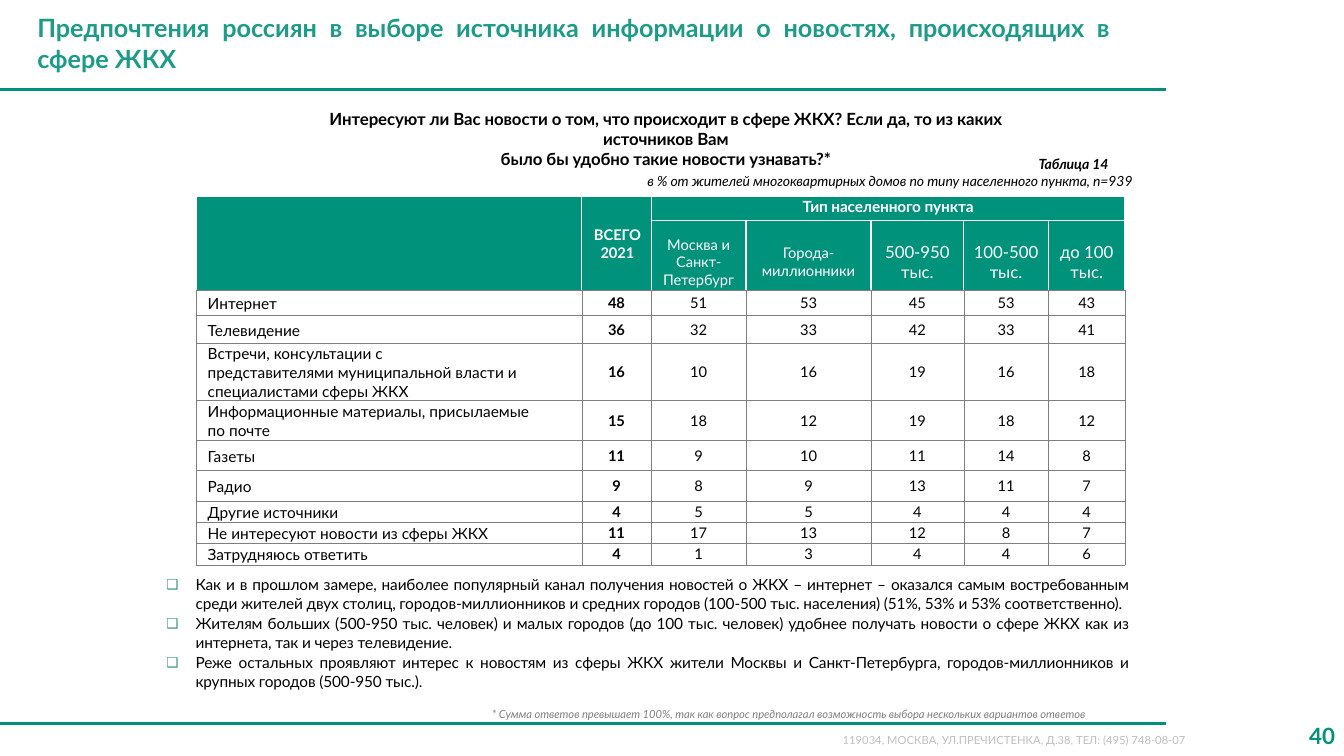
from lxml import etree
from pptx import Presentation
from pptx.dml.color import RGBColor
from pptx.enum import shapes, text
from pptx.oxml.ns import qn
from pptx.util import Inches, Pt

# Content
TITLE = "Предпочтения россиян в выборе источника информации о новостях, происходящих в сфере ЖКХ"
QUESTION = [
    "Интересуют ли Вас новости о том, что происходит в сфере ЖКХ? Если да, то из каких источников Вам",
    "было бы удобно такие новости узнавать?*",
]
TABLE_NUMBER = "Таблица 14"
TABLE_BASE = "в % от жителей многоквартирных домов по типу населенного пункта, n=939"
FOOTNOTE = ("* Сумма ответов превышает 100%, так как вопрос предполагал "
            "возможность выбора нескольких вариантов ответов")
ADDRESS = "119034, МОСКВА, УЛ.ПРЕЧИСТЕНКА, Д.38, ТЕЛ: (495) 748-08-07"
PAGE = "40"
TOTAL_HEADER = "ВСЕГО\n2021"
GROUP_HEADER = "Тип населенного пункта"
SETTLEMENTS = [("Москва и Санкт-Петербург", 10.5), ("Города-миллионники", 10.5),
               ("500-950 тыс.", 12), ("100-500 тыс.", 12), ("до 100 тыс.", 12)]
# Row height, label, total, then one value per settlement type
SOURCES = [
    (0.25, "Интернет", 48, 51, 53, 45, 53, 43),
    (0.27, "Телевидение", 36, 32, 33, 42, 33, 41),
    (0.57, "Встречи, консультации с\nпредставителями муниципальной власти и специалистами сферы ЖКХ",
     16, 10, 16, 19, 16, 18),
    (0.39, "Информационные материалы, присылаемые по почте", 15, 18, 12, 19, 18, 12),
    (0.3, "Газеты", 11, 9, 10, 11, 14, 8),
    (0.31, "Радио", 9, 8, 9, 13, 11, 7),
    (0.2, "Другие источники", 4, 5, 5, 4, 4, 4),
    (0.2, "Не интересуют новости из сферы ЖКХ", 11, 17, 13, 12, 8, 7),
    (0.22, "Затрудняюсь ответить", 4, 1, 3, 4, 4, 6),
]
FINDINGS = [
    "Как и в прошлом замере, наиболее популярный канал получения новостей о ЖКХ – интернет – "
    "оказался самым востребованным среди жителей двух столиц, городов-миллионников и средних "
    "городов (100-500 тыс. населения) (51%, 53% и 53% соответственно).",
    "Жителям больших (500-950 тыс. человек) и малых городов (до 100 тыс. человек) удобнее "
    "получать новости о сфере ЖКХ как из интернета, так и через телевидение.",
    "Реже остальных проявляют интерес к новостям из сферы ЖКХ жители Москвы и Санкт-Петербурга, "
    "городов-миллионников и крупных городов (500-950 тыс.).",
]
COLUMN_WIDTHS = [3.82, 0.69, 0.94, 1.24, 0.92, 0.84, 0.76]
HEADER_HEIGHTS = [0.24, 0.69]

FONT = "Lato"
BLACK = RGBColor(0x00, 0x00, 0x00)
WHITE = RGBColor(0xFF, 0xFF, 0xFF)
RULE_GREEN = RGBColor(0x00, 0x8F, 0x7D)
HEADER_GREEN = RGBColor(0x00, 0x92, 0x7A)
TITLE_GREEN = RGBColor(0x1C, 0x9B, 0x87)
BULLET_GREEN = RGBColor(0x33, 0x99, 0x66)
GRID_GRAY = RGBColor(0x7E, 0x7E, 0x7E)
NOTE_GRAY = RGBColor(0x80, 0x80, 0x80)
ADDRESS_GRAY = RGBColor(0xBF, 0xBF, 0xBF)
LEFT, CENTER, RIGHT, JUSTIFY = (text.PP_ALIGN.LEFT, text.PP_ALIGN.CENTER,
                                text.PP_ALIGN.RIGHT, text.PP_ALIGN.JUSTIFY)
MIDDLE, TOP = text.MSO_ANCHOR.MIDDLE, text.MSO_ANCHOR.TOP


def style(paragraph, size, color=BLACK, bold=False, italic=False, align=LEFT, spacing=0):
    paragraph.alignment = align
    font = paragraph.font
    font.name, font.size, font.bold, font.italic = FONT, Pt(size), bold, italic
    font.color.rgb = color
    if spacing:
        paragraph._p.pPr.find(qn("a:defRPr")).set("spc", str(spacing))


def set_margins(target, left, top, right, bottom):
    target.margin_left, target.margin_top = Inches(left), Inches(top)
    target.margin_right, target.margin_bottom = Inches(right), Inches(bottom)


def place(shape, box):
    shape.left, shape.top, shape.width, shape.height = map(Inches, box)


def fill_frame(shape, lines, margins=(0, 0.01, 0, 0), anchor=TOP, **look):
    frame = shape.text_frame
    frame.word_wrap = True
    frame.auto_size = text.MSO_AUTO_SIZE.NONE
    frame.vertical_anchor = anchor
    set_margins(frame, *margins)
    frame.text = "\n".join(lines)
    for paragraph in frame.paragraphs:
        style(paragraph, **look)
    return frame


def add_text(slide, box, lines, **look):
    return fill_frame(slide.shapes.add_textbox(*map(Inches, box)), lines, **look)


def add_rule(slide, y):
    rule = slide.shapes.add_connector(shapes.MSO_CONNECTOR.STRAIGHT, 0, Inches(y),
                                      Inches(11.56), Inches(y))
    rule.line.color.rgb = RULE_GREEN
    rule.line.width = Pt(2)
    etree.SubElement(rule._element.spPr, qn("a:effectLst"))


def add_bullet(paragraph):
    properties = paragraph._p.get_or_add_pPr()
    properties.set("marL", str(Inches(0.31)))
    properties.set("indent", str(Inches(-0.29)))
    color = etree.SubElement(properties, qn("a:buClr"))
    etree.SubElement(color, qn("a:srgbClr"), val=str(BULLET_GREEN))
    etree.SubElement(properties, qn("a:buSzPct"), val="88000")
    etree.SubElement(properties, qn("a:buChar"), char="❑")


def set_border(cell, side, color, width):
    line = etree.SubElement(cell._tc.get_or_add_tcPr(), qn("a:ln" + side), w=str(Pt(width)))
    solid = etree.SubElement(line, qn("a:solidFill"))
    etree.SubElement(solid, qn("a:srgbClr"), val=str(color))


def fill_cell(cell, content, margins, anchor=MIDDLE, **look):
    cell.text = content
    cell.vertical_anchor = anchor
    set_margins(cell, *margins)
    for paragraph in cell.text_frame.paragraphs:
        style(paragraph, **look)


def add_sources_table(slide):
    heights = HEADER_HEIGHTS + [source[0] for source in SOURCES]
    frame = slide.shapes.add_table(len(heights), len(COLUMN_WIDTHS), Inches(1.95), Inches(1.95),
                                   Inches(sum(COLUMN_WIDTHS)), Inches(sum(heights)))
    table = frame.table
    table.first_row = table.horz_banding = False
    for column, width in zip(table.columns, COLUMN_WIDTHS):
        column.width = Inches(width)
    for row, height in zip(table.rows, heights):
        row.height = Inches(height)

    # Borders and fills
    for row_index in range(len(heights)):
        for column_index in range(len(COLUMN_WIDTHS)):
            cell = table.cell(row_index, column_index)
            header = row_index < len(HEADER_HEIGHTS)
            for side in "LRTB":
                white = header and not (side == "B" and (row_index == 1 or column_index < 2))
                set_border(cell, side, *((WHITE, 1) if white else (GRID_GRAY, 0.25)))
            if header:
                cell.fill.solid()
                cell.fill.fore_color.rgb = HEADER_GREEN
            else:
                cell.fill.background()

    # Header
    for column_index in (0, 1):
        table.cell(0, column_index).merge(table.cell(1, column_index))
    table.cell(0, 2).merge(table.cell(0, 6))
    fill_cell(table.cell(0, 1), TOTAL_HEADER, (0.02, 0.01, 0, 0), size=10.5, color=WHITE,
              bold=True, align=CENTER)
    fill_cell(table.cell(0, 2), GROUP_HEADER, (0, 0.01, 0, 0), anchor=TOP, size=11, color=WHITE,
              bold=True, align=CENTER, spacing=-10)
    for column_index, (name, size) in enumerate(SETTLEMENTS, 2):
        fill_cell(table.cell(1, column_index), name, (0, 0.13, 0, 0), size=size, color=WHITE,
                  align=CENTER)

    # Values
    for row_index, (_, label, *values) in enumerate(SOURCES, len(HEADER_HEIGHTS)):
        fill_cell(table.cell(row_index, 0), label, (0.11, 0.02, 0.45, 0), size=11)
        for column_index, value in enumerate(values, 1):
            fill_cell(table.cell(row_index, column_index), str(value), (0.01, 0.01, 0.01, 0),
                      size=10.5, bold=column_index == 1, align=CENTER)


def main():
    presentation = Presentation()
    presentation.slide_width, presentation.slide_height = Inches(13.33), Inches(7.5)
    slide = presentation.slides.add_slide(presentation.slide_layouts[1])

    # Frame of the page
    for y in (0.89, 7.18):
        add_rule(slide, y)
    inset = (0.1, 0.05, 0.1, 0.05)
    add_text(slide, (8.26, 7.23, 3.84, 0.24), [ADDRESS], margins=inset, size=8,
             color=ADDRESS_GRAY)
    add_text(slide, (12.65, 7.1, 0.69, 0.4), [PAGE], margins=inset, anchor=MIDDLE, size=16,
             color=HEADER_GREEN, bold=True, align=RIGHT)

    # Title and captions
    title = slide.shapes.title
    place(title, (0.27, 0, 10.84, 0.85))
    fill_frame(title, [TITLE], margins=inset, anchor=MIDDLE, size=18, color=TITLE_GREEN,
               bold=True, align=JUSTIFY)
    add_text(slide, (2.84, 1.07, 7.53, 0.42), QUESTION, size=12, bold=True, align=CENTER,
             spacing=-5)
    add_text(slide, (10.3, 1.53, 0.81, 0.18), [TABLE_NUMBER], size=10, bold=True, italic=True,
             spacing=-5)
    add_text(slide, (6.42, 1.7, 5.22, 0.18), [TABLE_BASE], size=10, italic=True, spacing=-5)

    add_sources_table(slide)

    # Findings and footnote
    body = slide.placeholders[1]
    place(body, (1.63, 5.7, 9.57, 1.35))
    body.text_frame.text = "\n".join(FINDINGS)
    frame = fill_frame(body, FINDINGS, size=11, align=JUSTIFY, spacing=-10)
    for index, paragraph in enumerate(frame.paragraphs):
        properties = paragraph._p.pPr
        font_defaults = properties.find(qn("a:defRPr"))
        add_bullet(paragraph)
        properties.append(font_defaults)
        paragraph.space_before = Pt(1.4 if index else 0)
    add_text(slide, (4.88, 7.02, 6.43, 0.14), [FOOTNOTE], margins=(0, 0, 0, 0), size=8,
             color=NOTE_GRAY, italic=True, spacing=-5)

    presentation.save("out.pptx")


if __name__ == "__main__":
    main()
